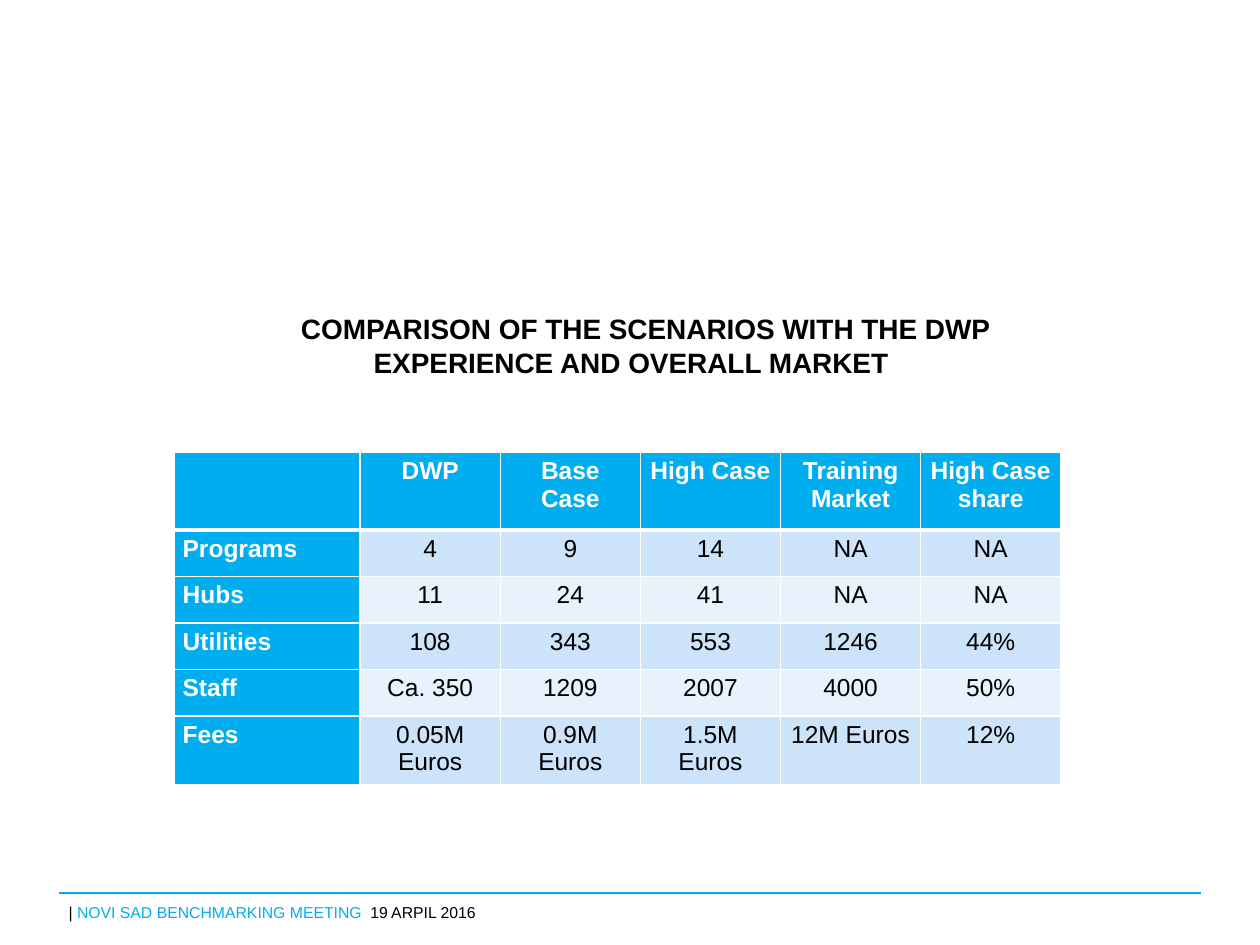
from lxml import etree
from pptx import Presentation
from pptx.dml.color import RGBColor
from pptx.enum.shapes import MSO_CONNECTOR
from pptx.enum.text import MSO_ANCHOR, PP_ALIGN
from pptx.oxml.ns import qn
from pptx.util import Inches, Pt

WIDE, HIGH = 10, 7.5
FONT = "Arial"
BLUE = RGBColor(0x00, 0xAE, 0xEF)
PALE = RGBColor(0xCC, 0xE3, 0xF9)
FAINT = RGBColor(0xE7, 0xF2, 0xFC)
WHITE = RGBColor(0xFF, 0xFF, 0xFF)
BLACK = RGBColor(0x00, 0x00, 0x00)
LINE = MSO_CONNECTOR.STRAIGHT
MIDDLE = MSO_ANCHOR.MIDDLE
LEFT, CENTER = PP_ALIGN.LEFT, PP_ALIGN.CENTER

TITLE = "COMPARISON OF THE SCENARIOS WITH THE DWP EXPERIENCE AND OVERALL MARKET"
ROWS = [
    ["", "DWP", "Base Case", "High Case", "Training Market", "High Case share"],
    ["Programs", "4", "9", "14", "NA", "NA"],
    ["Hubs", "11", "24", "41", "NA", "NA"],
    ["Utilities", "108", "343", "553", "1246", "44%"],
    ["Staff", "Ca. 350", "1209", "2007", "4000", "50%"],
    ["Fees", "0.05M Euros", "0.9M Euros", "1.5M Euros", "12M Euros", "12%"],
]
FOOT = [
    (" | ", BLACK),
    ("NOVI SAD BENCHMARKING MEETING  ", BLUE),
    ("19 ARPIL 2016", BLACK),
]


def add_run(para, text, size, color, bold=False):
    run = para.add_run()
    run.text = text
    run.font.name = FONT
    run.font.size = Pt(size)
    run.font.bold = bold
    run.font.color.rgb = color


def add_title(slide, box):
    frame = slide.shapes.add_textbox(*box).text_frame
    frame.word_wrap = True
    frame.vertical_anchor = MIDDLE
    para = frame.paragraphs[0]
    para.alignment = CENTER
    para._p.get_or_add_pPr().set("indent", str(Inches(0.23)))
    add_run(para, TITLE, 16, BLACK, True)


def add_edge(cell, side, width):
    edge = etree.SubElement(cell._tc.get_or_add_tcPr(), qn("a:ln" + side))
    edge.set("w", str(Pt(width)))
    fill = etree.SubElement(edge, qn("a:solidFill"))
    etree.SubElement(fill, qn("a:srgbClr")).set("val", str(WHITE))


def fill_cell(cell, text, row, col):
    cell.margin_left = cell.margin_right = Inches(0.07)
    cell.margin_top = cell.margin_bottom = Inches(0.04)
    tops, ends = (3 if row == 1 else 1), (3 if row == 0 else 1)
    for side, width in zip("LRTB", (1, 1, tops, ends)):
        add_edge(cell, side, width)
    head = row == 0 or col == 0
    cell.fill.solid()
    cell.fill.fore_color.rgb = BLUE if head else PALE if row % 2 else FAINT
    para = cell.text_frame.paragraphs[0]
    para.alignment = CENTER if col else LEFT
    if text:
        add_run(para, text, 14, WHITE if head else BLACK, head)


def add_grid(slide, box):
    left, top, width, height = box
    table = slide.shapes.add_table(len(ROWS), len(ROWS[0]), *box).table
    first, head = int(width * 0.21), int(height * 0.25)
    for col, item in enumerate(table.columns):
        item.width = (width - first) // (len(ROWS[0]) - 1) if col else first
    for row, item in enumerate(table.rows):
        item.height = (height - head) // (len(ROWS) - 1) if row else head
    for row, texts in enumerate(ROWS):
        for col, text in enumerate(texts):
            fill_cell(table.cell(row, col), text, row, col)


def add_foot(slide, box):
    left, top, width, height = box
    rule = slide.shapes.add_connector(LINE, left, top, left + width, top)
    rule.line.color.rgb = BLUE
    rule.line.width = Pt(1)
    etree.SubElement(rule._element.spPr, qn("a:effectLst"))
    pad = Inches(0.04)
    note = slide.shapes.add_textbox(left + pad, top + 2 * pad, width - pad, height - 2 * pad)
    frame = note.text_frame
    frame.word_wrap = True
    frame.margin_left = frame.margin_right = 0
    frame.margin_top = frame.margin_bottom = 0
    for text, color in FOOT:
        add_run(frame.paragraphs[0], text, 9, color)


def share(left, top, width, height):
    return (Inches(left * WIDE), Inches(top * HIGH),
            Inches(width * WIDE), Inches(height * HIGH))


def main():
    deck = Presentation()
    deck.slide_width, deck.slide_height = Inches(WIDE), Inches(HIGH)
    slide = deck.slides.add_slide(deck.slide_layouts[6])
    add_foot(slide, share(0.047, 0.945, 0.906, 0.052))
    add_grid(slide, share(0.138, 0.479, 0.704, 0.328))
    add_title(slide, share(0.161, 0.323, 0.68, 0.085))
    deck.save("out.pptx")


if __name__ == "__main__":
    main()
